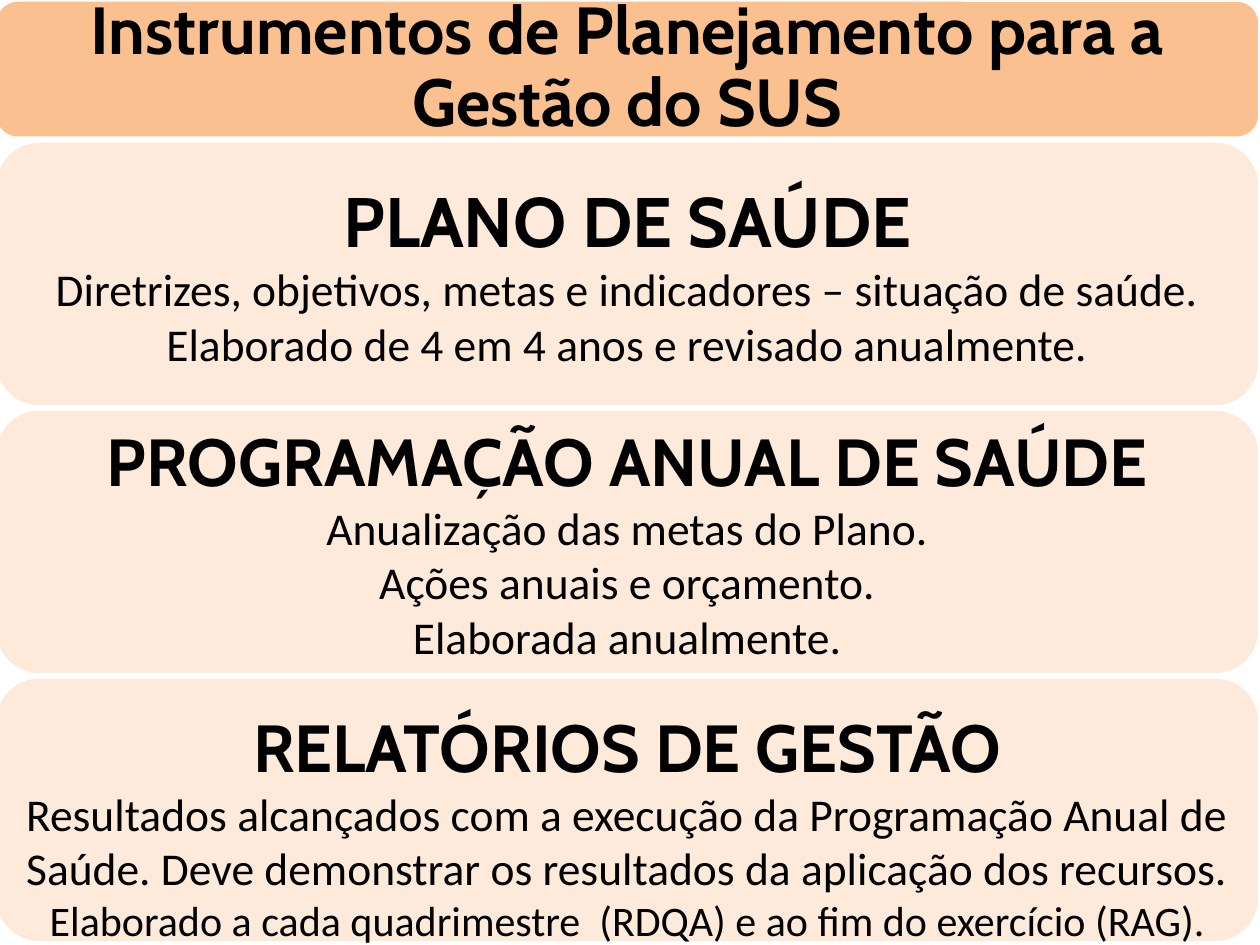
from dataclasses import dataclass

from pptx import Presentation
from pptx.dml.color import RGBColor
from pptx.enum.shapes import MSO_SHAPE
from pptx.enum.text import MSO_ANCHOR, PP_ALIGN
from pptx.util import Pt

ROUNDED = MSO_SHAPE.ROUNDED_RECTANGLE
MIDDLE = MSO_ANCHOR.MIDDLE
CENTER = PP_ALIGN.CENTER


@dataclass(frozen=True)
class Theme:
    """Colours, fonts and type sizes of the slide."""
    title_fill: RGBColor = RGBColor(0xFA, 0xC0, 0x90)
    panel_fill: RGBColor = RGBColor(0xFD, 0xEA, 0xDA)
    line: RGBColor = RGBColor(0xFF, 0xFF, 0xFF)
    text: RGBColor = RGBColor(0, 0, 0)
    heading_font: str = "Cabin"
    body_font: str = "Calibri"
    large: int = 40
    heading: int = 38
    body: int = 26
    small: int = 24


THEME = Theme()
LEFT, WIDTH = -3, 723
TITLE_HEIGHT = 79
PANEL_TOP, PANEL_HEIGHT, PANEL_PITCH = 80.6, 152, 153.1

PANELS = [
    ("PLANO DE SAÚDE", THEME.large, [
        ("Diretrizes, objetivos, metas e indicadores – situação de saúde.", THEME.body),
        ("Elaborado de 4 em 4 anos e revisado anualmente.", THEME.body),
    ], (12, 12, 12)),
    ("PROGRAMAÇÃO ANUAL DE SAÚDE", THEME.heading, [
        ("Anualização das metas do Plano.", THEME.body),
        ("Ações anuais e orçamento.", THEME.body),
        ("Elaborada anualmente.", THEME.body),
    ], (12, 12, 12)),
    ("RELATÓRIOS DE GESTÃO", THEME.heading, [
        ("Resultados alcançados com a execução da Programação Anual de Saúde. "
         "Deve demonstrar os resultados da aplicação dos recursos.", THEME.body),
        ("Elaborado a cada quadrimestre  (RDQA) e ao fim do exercício (RAG).", THEME.small),
    ], (4.3, 22, 4)),
]


def add_box(slide, top, height, fill, insets):
    """Add a full-width rounded box and return its text frame."""
    sp = slide.shapes.add_shape(ROUNDED, Pt(LEFT), Pt(top), Pt(WIDTH), Pt(height))
    sp.shadow.inherit = False
    sp.fill.solid()
    sp.fill.fore_color.rgb = fill
    sp.line.color.rgb = THEME.line
    sp.line.width = Pt(2)
    side, above, below = insets
    tf = sp.text_frame
    tf.word_wrap = True
    tf.vertical_anchor = MIDDLE
    tf.margin_left = tf.margin_right = Pt(side)
    tf.margin_top, tf.margin_bottom = Pt(above), Pt(below)
    return tf


def write(p, text, font, size, bold=False):
    """Fill a paragraph with centred text in one style."""
    p.text = text
    p.alignment = CENTER
    p.font.name = font
    p.font.size = Pt(size)
    p.font.bold = bold
    p.font.color.rgb = THEME.text


def add_title(slide, text):
    """Add the title banner."""
    tf = add_box(slide, 0, TITLE_HEIGHT, THEME.title_fill, (12, 12, 12))
    p = tf.paragraphs[0]
    write(p, text, THEME.heading_font, THEME.heading, True)
    p.line_spacing = 0.9


def add_panel(slide, top, heading, size, lines, insets):
    """Add a panel with a heading and its body lines."""
    tf = add_box(slide, top, PANEL_HEIGHT, THEME.panel_fill, insets)
    write(tf.paragraphs[0], heading, THEME.heading_font, size, True)
    for text, body_size in lines:
        write(tf.add_paragraph(), text, THEME.body_font, body_size)


def main():
    """Build and save the slide."""
    prs = Presentation()
    prs.slide_width, prs.slide_height = Pt(720), Pt(540)
    slide = prs.slides.add_slide(prs.slide_layouts[6])
    add_title(slide, "Instrumentos de Planejamento para a Gestão do SUS")
    for i, panel in enumerate(PANELS):
        add_panel(slide, PANEL_TOP + i * PANEL_PITCH, *panel)
    prs.save("out.pptx")


if __name__ == "__main__":
    main()
